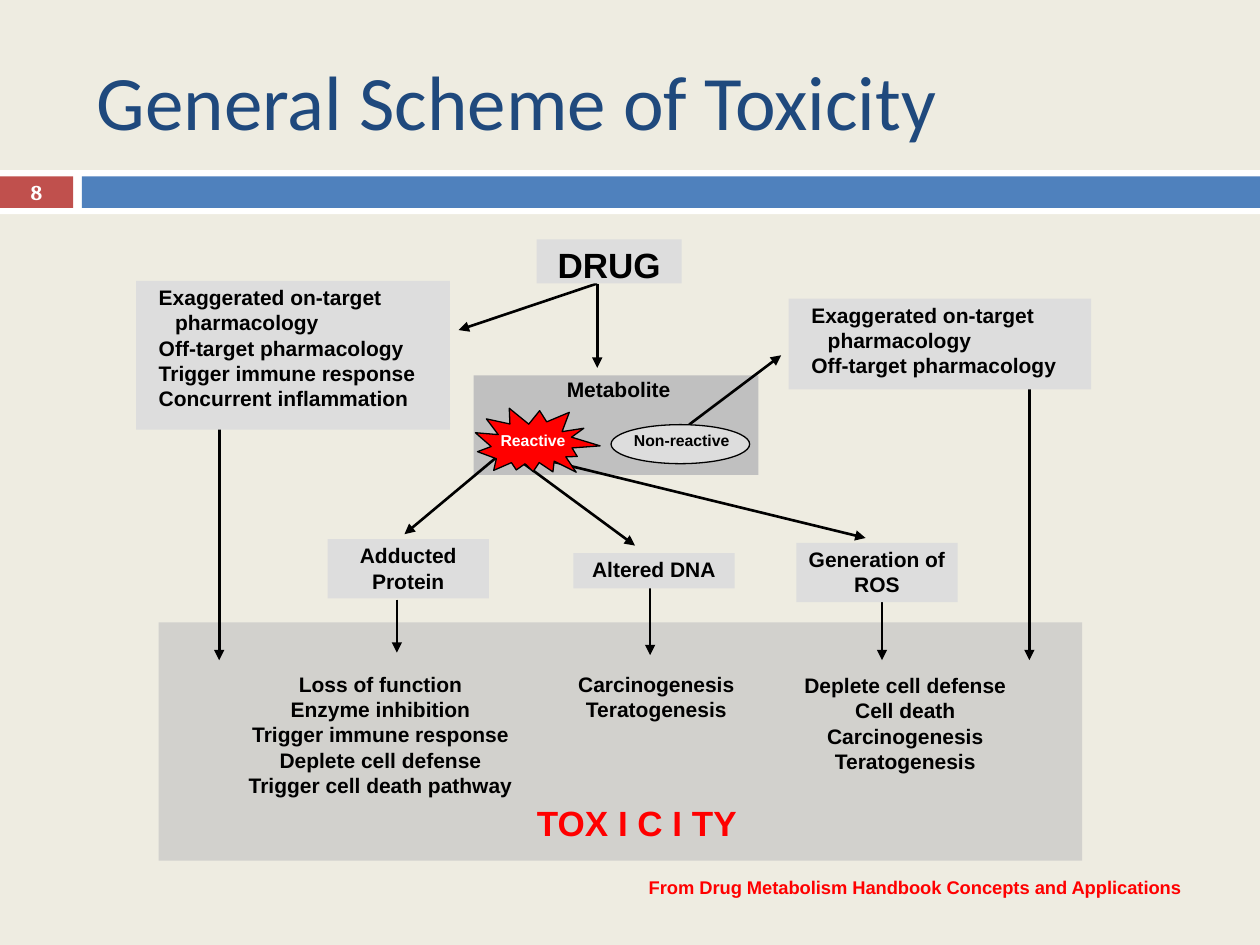
from lxml import etree
from pptx import Presentation, util as u
from pptx.dml.color import RGBColor
from pptx.enum import shapes, text
from pptx.oxml.ns import qn

THEME = {
    "paper": "EEECE1", "white": "FFFFFF", "black": "000000",
    "title": "1F497D", "bar": "4F81BD", "badge": "C0504D",
    "box": "DDDDDD", "panel": "C0C0C0", "alert": "FF0000",
    "title size": 44, "heading size": 20, "body size": 12,
    "source size": 10.5, "small size": 9,
    "title font": "Calibri", "number font": "Cambria", "body font": "Arial",
}
LEFT, CENTER, RIGHT = text.PP_ALIGN.LEFT, text.PP_ALIGN.CENTER, text.PP_ALIGN.RIGHT
TOP, MIDDLE = text.MSO_ANCHOR.TOP, text.MSO_ANCHOR.MIDDLE
RECTANGLE = shapes.MSO_SHAPE.RECTANGLE

deck = Presentation()
deck.slide_width, deck.slide_height = u.Inches(10), u.Inches(7.5)
COLUMN, ROW = deck.slide_width / 100, deck.slide_height / 75
page = deck.slides.add_slide(deck.slide_layouts[6])
page.background.fill.solid()
page.background.fill.fore_color.rgb = RGBColor.from_string(THEME["paper"])


def add_shape(at, fill, kind=RECTANGLE, outlined=False):
    """Place a flat shape; at is left, top, width, height in columns and rows."""
    left, top, width, height = at
    shape = page.shapes.add_shape(kind, int(left * COLUMN), int(top * ROW),
                                  int(width * COLUMN), int(height * ROW))
    shape.shadow.inherit = False
    shape.fill.solid()
    shape.fill.fore_color.rgb = RGBColor.from_string(THEME[fill])
    if outlined:
        shape.line.color.rgb = RGBColor.from_string(THEME["black"])
        shape.line.width = u.Pt(0.75)
    else:
        shape.line.fill.background()
    return shape


def add_text(at, lines, fill=None, size="body size", color="black", align=CENTER,
             font="body font", bold=True, anchor=TOP, hanging=False, inset=(0.6, 0.3)):
    """Write one paragraph per line, in a filled box when fill is given."""
    left, top, width, height = at
    box = add_shape(at, fill) if fill else page.shapes.add_textbox(
        int(left * COLUMN), int(top * ROW), int(width * COLUMN), int(height * ROW))
    frame = box.text_frame
    frame.word_wrap = True
    frame.vertical_anchor = anchor
    frame.margin_left = frame.margin_right = int(inset[0] * COLUMN)
    frame.margin_top = frame.margin_bottom = int(inset[1] * ROW)
    frame.text = "\n".join(lines)
    for para in frame.paragraphs:
        if hanging:
            properties = para._p.get_or_add_pPr()
            properties.set("marL", str(u.Inches(0.25)))
            properties.set("indent", str(u.Inches(-0.13)))
        para.alignment = align
        para.font.name = THEME[font]
        para.font.size = u.Pt(THEME[size])
        para.font.bold = bold
        para.font.color.rgb = RGBColor.from_string(THEME[color])
    return box


# Title and header band
add_shape((0, 13.5, 100, 3.5), "white")
add_shape((0, 14, 5.8, 2.5), "badge")
add_shape((6.5, 14, 93.5, 2.5), "bar")
add_text((6.7, 2.5, 89.2, 10.8), ["General Scheme of Toxicity"], size="title size",
         color="title", font="title font", bold=False, align=LEFT, anchor=MIDDLE,
         inset=(1, 0.5))
add_text((0, 13.9, 5.8, 2.7), ["8"], color="white", font="number font", anchor=MIDDLE)

# Background panels
toxicity_panel = add_shape((12.6, 49.4, 73.3, 18.9), "panel")
panel_color = toxicity_panel.fill._xPr.find(".//" + qn("a:srgbClr"))
etree.SubElement(panel_color, qn("a:alpha"), val="60000")
add_shape((37.6, 29.8, 22.6, 7.9), "panel")

# Arrows: start column, start row, end column, end row
arrows = [
    (47.4, 22.5, 36.4, 26.2), (47.4, 22.5, 47.4, 29.2),
    (17.4, 32.9, 17.4, 52.4), (81.7, 30.5, 81.7, 52.4),
    (31.5, 47.6, 31.5, 51.8), (51.6, 46.5, 51.6, 52), (70, 47.6, 70, 52.4),
    (39.4, 36.3, 32.1, 42.4), (54.7, 33.7, 62, 28.2),
    (41.3, 36.6, 50.4, 43.3), (43.7, 36.6, 68.7, 42.7),
]
for start_column, start_row, end_column, end_row in arrows:
    arrow = page.shapes.add_connector(
        shapes.MSO_CONNECTOR.STRAIGHT, int(start_column * COLUMN), int(start_row * ROW),
        int(end_column * COLUMN), int(end_row * ROW))
    arrow.line.color.rgb = RGBColor.from_string(THEME["black"])
    arrow.line.width = u.Pt(1.5)
    etree.SubElement(arrow.line._get_or_add_ln(), qn("a:tailEnd"), type="triangle")
    etree.SubElement(arrow._element.spPr, qn("a:effectLst"))

# Drug and its direct effects
add_text((42.6, 19, 11.5, 3.5), ["DRUG"], fill="box", size="heading size")
direct_effects = ["Exaggerated on-target pharmacology", "Off-target pharmacology"]
immune_effects = ["Trigger immune response", "Concurrent inflammation"]
for at, lines in [((10.8, 22.3, 24.9, 11.8), direct_effects + immune_effects),
                  ((62.6, 23.7, 24, 7.2), direct_effects)]:
    add_text(at, lines, fill="box", align=LEFT, hanging=True)

# Metabolite and its two forms
add_text((43, 29.6, 12.2, 2.7), ["Metabolite"])
ellipse = add_shape((48.5, 33.7, 11, 3.1), "box", shapes.MSO_SHAPE.OVAL, outlined=True)
label = add_text((48, 33.9, 12.2, 2.7), ["Non-reactive"], size="small size")
page.shapes.add_group_shape([ellipse, label])
burst = add_shape((37.7, 32.1, 9.8, 6.1), "alert", shapes.MSO_SHAPE.EXPLOSION2, outlined=True)
burst.rotation = 16.2
add_text((37.7, 33.9, 9.2, 2.7), ["Reactive"], size="small size", color="white")

# Products of the reactive metabolite
for left, top, height, product in [(26, 42.8, 4.7, "Adducted Protein"),
                                   (45.5, 43.9, 2.8, "Altered DNA"),
                                   (63.2, 43.1, 4.7, "Generation of ROS")]:
    add_text((left, top, 12.8, height), [product], fill="box")

# Outcomes
outcomes = [
    ((16.7, 53, 25.8, 12.6), ["Loss of function", "Enzyme inhibition",
                              "Trigger immune response", "Deplete cell defense",
                              "Trigger cell death pathway"]),
    ((43, 53, 17, 6.1), ["Carcinogenesis", "Teratogenesis"]),
    ((60.8, 53.1, 20.9, 10.2), ["Deplete cell defense", "Cell death",
                                "Carcinogenesis", "Teratogenesis"]),
]
for at, lines in outcomes:
    add_text(at, lines, hanging=True)
add_text((34.2, 63.3, 32.7, 5), ["TOX I C I TY"], size="heading size", color="alert")
add_text((47.5, 69.2, 46.9, 3.3),
         ["From Drug Metabolism Handbook Concepts and Applications"],
         size="source size", color="alert", align=RIGHT)

deck.save("out.pptx")
